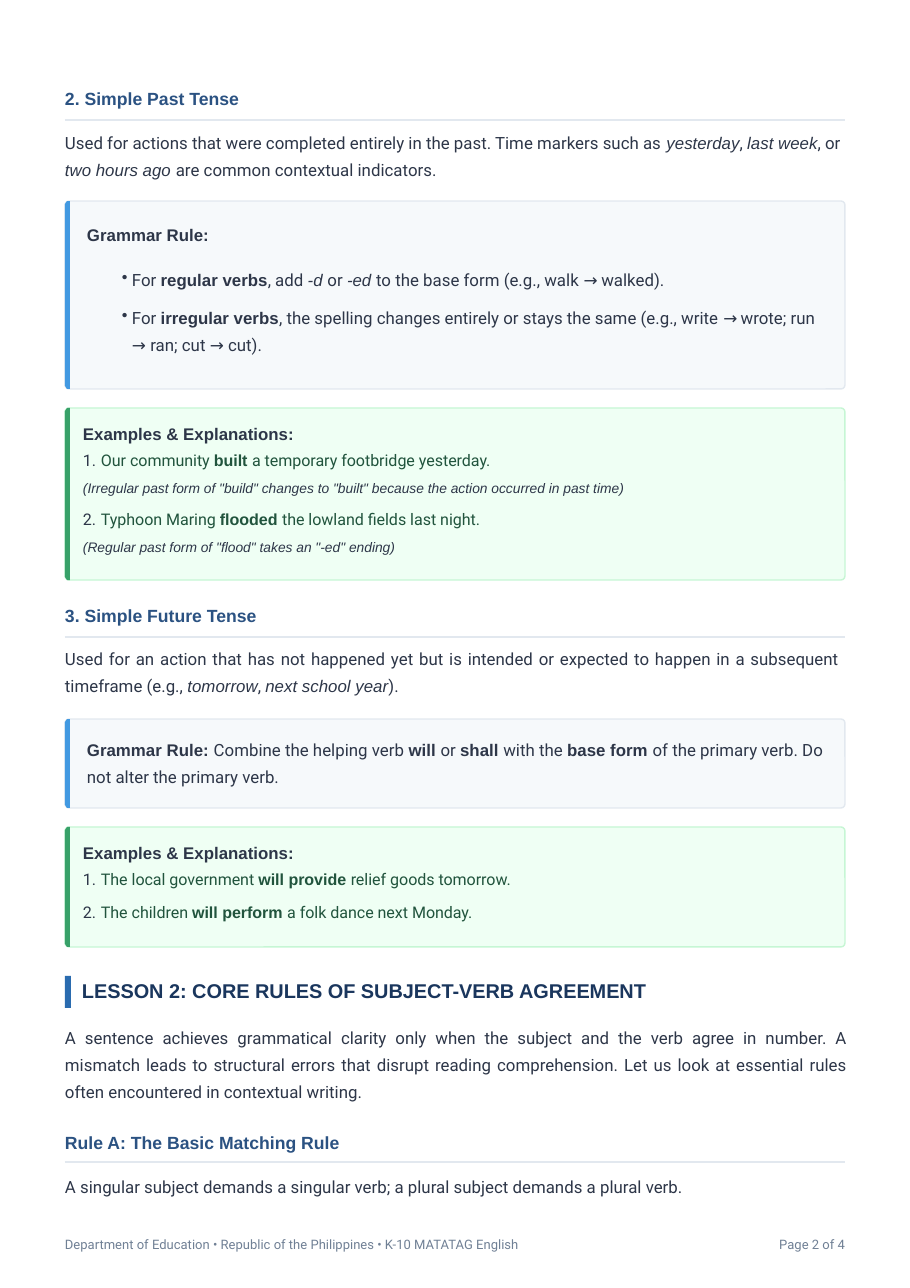
from lxml.etree import SubElement
from pptx import Presentation
from pptx.dml.color import RGBColor
from pptx.enum.shapes import MSO_CONNECTOR as Connector, MSO_SHAPE as Shape
from pptx.enum.text import MSO_ANCHOR as Anchor, PP_ALIGN as Align
from pptx.oxml.ns import qn
from pptx.util import Emu, Pt

SCALE = 8298
LEFT, CONTENT_WIDTH = 65, 780
BODY_LINE, EXAMPLE_LINE = 27, 26

COLORS = {
    "body": "2D3648",
    "heading": "2B5282",
    "lesson": "1A365D",
    "lesson_bar": "2A6BAF",
    "rule": "E2E8EF",
    "example": "21543D",
    "footer": "708095",
}
GRAMMAR = {"fill": "F6F9FB", "border": "E2E8EF", "accent": "4299E1"}
EXAMPLES = {"fill": "EFFFF4", "border": "C6F6D4", "accent": "38A169"}


def px(value):
    return Emu(round(value * SCALE))


def rgb(value):
    return RGBColor.from_string(value)


def bold(text):
    return text, "bold"


def italic(text):
    return text, "italic"


def add_marker(paragraph, bullet=None, number=None, indent=0, hanging=0):
    properties = paragraph._p.get_or_add_pPr()
    properties.set("marL", str(px(indent)))
    properties.set("indent", str(-px(hanging)))
    if number:
        color = SubElement(properties, qn("a:buClr"))
        SubElement(color, qn("a:srgbClr"), val=COLORS["body"])
        SubElement(properties, qn("a:buAutoNum"), type="arabicPeriod", startAt=str(number))
    elif bullet:
        SubElement(properties, qn("a:buChar"), char=bullet)


def write(paragraph, *runs, size=11, color="body", line=BODY_LINE, before=0,
          align=Align.LEFT, **marker):
    paragraph.alignment = align
    paragraph.line_spacing = px(line)
    paragraph.space_before = px(before)
    if marker:
        add_marker(paragraph, **marker)
    for item in runs:
        text, style = item if isinstance(item, tuple) else (item, "regular")
        run = paragraph.add_run()
        run.text = text
        font = run.font
        font.name = "Roboto" if style == "regular" else "Arial"
        font.size = Pt(size)
        font.bold = style == "bold"
        font.italic = style == "italic"
        font.color.rgb = rgb(COLORS[color])


def add_text_frame(slide, left, top, width, height):
    frame = slide.shapes.add_textbox(px(left), px(top), px(width), px(height)).text_frame
    frame.word_wrap = True
    frame.vertical_anchor = Anchor.TOP
    frame.margin_left = frame.margin_right = frame.margin_top = frame.margin_bottom = 0
    return frame


def add_text(slide, left, top, width, height, *runs, **style):
    frame = add_text_frame(slide, left, top, width, height)
    write(frame.paragraphs[0], *runs, **style)
    return frame


def paint(shape, fill, border=None):
    shape.shadow.inherit = False
    shape.fill.solid()
    shape.fill.fore_color.rgb = rgb(fill)
    if border:
        shape.line.color.rgb = rgb(border)
        shape.line.width = Pt(0.9)
    else:
        shape.line.fill.background()


def add_panel(slide, top, height, palette):
    panel = slide.shapes.add_shape(
        Shape.ROUNDED_RECTANGLE, px(LEFT), px(top), px(CONTENT_WIDTH), px(height))
    panel.adjustments[0] = 4 / height
    paint(panel, palette["fill"], palette["border"])
    bottom = top + height
    builder = slide.shapes.build_freeform(LEFT + 5, top, scale=SCALE)
    builder.add_line_segments([
        (LEFT + 2, top), (LEFT, top + 3), (LEFT, bottom - 3),
        (LEFT + 2, bottom), (LEFT + 5, bottom)])
    paint(builder.convert_to_shape(), palette["accent"])


def add_heading(slide, text, top, rule):
    add_text(slide, LEFT, top, CONTENT_WIDTH, 22, bold(text),
             size=11.5, color="heading", line=22)
    connector = slide.shapes.add_connector(
        Connector.STRAIGHT, px(LEFT), px(rule), px(LEFT + CONTENT_WIDTH), px(rule))
    connector.line.color.rgb = rgb(COLORS["rule"])
    connector.line.width = Pt(0.9)
    SubElement(connector._element.spPr, qn("a:effectLst"))


def add_examples(slide, top, height, examples):
    add_panel(slide, top, height, EXAMPLES)
    frame = add_text(slide, 83, top + 10, 750, height - 20,
                     bold("Examples & Explanations:"), line=EXAMPLE_LINE)
    for number, (sentence, note) in enumerate(examples, 1):
        write(frame.add_paragraph(), *sentence, size=10.5, color="example",
              line=EXAMPLE_LINE, before=7 if number > 1 else 0,
              number=number, indent=18, hanging=18)
        if note:
            write(frame.add_paragraph(), italic(note), size=9, line=EXAMPLE_LINE)


def add_lesson_title(slide, text, top):
    bar = slide.shapes.add_shape(Shape.RECTANGLE, px(LEFT), px(top), px(6), px(32))
    paint(bar, COLORS["lesson_bar"])
    add_text(slide, 82, top, 760, 26, bold(text), size=13, color="lesson", line=26)


def add_footer(slide, text, left, width, align):
    add_text(slide, left, 1235, width, 17, text, size=8.5, color="footer",
             line=17, align=align)


def add_past_tense(slide):
    add_heading(slide, "2. Simple Past Tense", 87, 120)
    add_text(slide, LEFT, 126, 784, 54,
             "Used for actions that were completed entirely in the past. Time markers such as ",
             italic("yesterday"), ", ", italic("last week"), ", or ",
             italic("two hours ago "), "are common contextual indicators.")
    add_panel(slide, 201, 188, GRAMMAR)
    frame = add_text(slide, 87, 218, 738, 140, bold("Grammar Rule:"))
    bullet = {"bullet": "•", "indent": 45, "hanging": 10}
    write(frame.add_paragraph(), "For ", bold("regular verbs"), ", add ", italic("-d "),
          "or ", italic("-ed "), "to the base form (e.g., walk → walked).",
          before=18, **bullet)
    write(frame.add_paragraph(), "For ", bold("irregular verbs"),
          ", the spelling changes entirely or stays the same "
          "(e.g., write → wrote; run → ran; cut → cut).",
          before=11, **bullet)
    add_examples(slide, 408, 172, [
        (("Our community ", bold("built "), "a temporary footbridge yesterday."),
         '(Irregular past form of "build" changes to "built" because the action '
         'occurred in past time)'),
        (("Typhoon Maring ", bold("flooded "), "the lowland fields last night."),
         '(Regular past form of "flood" takes an "-ed" ending)'),
    ])


def add_future_tense(slide):
    add_heading(slide, "3. Simple Future Tense", 604, 637)
    add_text(slide, LEFT, 642, 775, 54,
             "Used for an action that has not happened yet but is intended or expected "
             "to happen in a subsequent timeframe (e.g., ",
             italic("tomorrow"), ", ", italic("next school year"), ").",
             align=Align.JUSTIFY)
    add_panel(slide, 719, 89, GRAMMAR)
    add_text(slide, 87, 733, 745, 54, bold("Grammar Rule: "), "Combine the helping verb ",
             bold("will "), "or ", bold("shall "), "with the ", bold("base form "),
             "of the primary verb. Do not alter the primary verb.")
    add_examples(slide, 827, 120, [
        (("The local government ", bold("will provide "), "relief goods tomorrow."), None),
        (("The children ", bold("will perform "), "a folk dance next Monday."), None),
    ])


def add_agreement_lesson(slide):
    add_lesson_title(slide, "LESSON 2: CORE RULES OF SUBJECT-VERB AGREEMENT", 976)
    add_text(slide, LEFT, 1021, 783, 81,
             "A sentence achieves grammatical clarity only when the subject and the verb "
             "agree in number. A mismatch leads to structural errors that disrupt reading "
             "comprehension. Let us look at essential rules often encountered in "
             "contextual writing.",
             align=Align.JUSTIFY)
    add_heading(slide, "Rule A: The Basic Matching Rule", 1131, 1162)
    add_text(slide, LEFT, 1170, CONTENT_WIDTH, 27,
             "A singular subject demands a singular verb; a plural subject demands a plural verb.")


def main():
    presentation = Presentation()
    presentation.slide_width = px(910)
    presentation.slide_height = px(1288)
    slide = presentation.slides.add_slide(presentation.slide_layouts[6])
    add_past_tense(slide)
    add_future_tense(slide)
    add_agreement_lesson(slide)
    add_footer(slide, "Department of Education • Republic of the Philippines • K-10 MATATAG English",
               LEFT, 600, Align.LEFT)
    add_footer(slide, "Page 2 of 4", 745, 100, Align.RIGHT)
    presentation.save("out.pptx")


if __name__ == "__main__":
    main()
